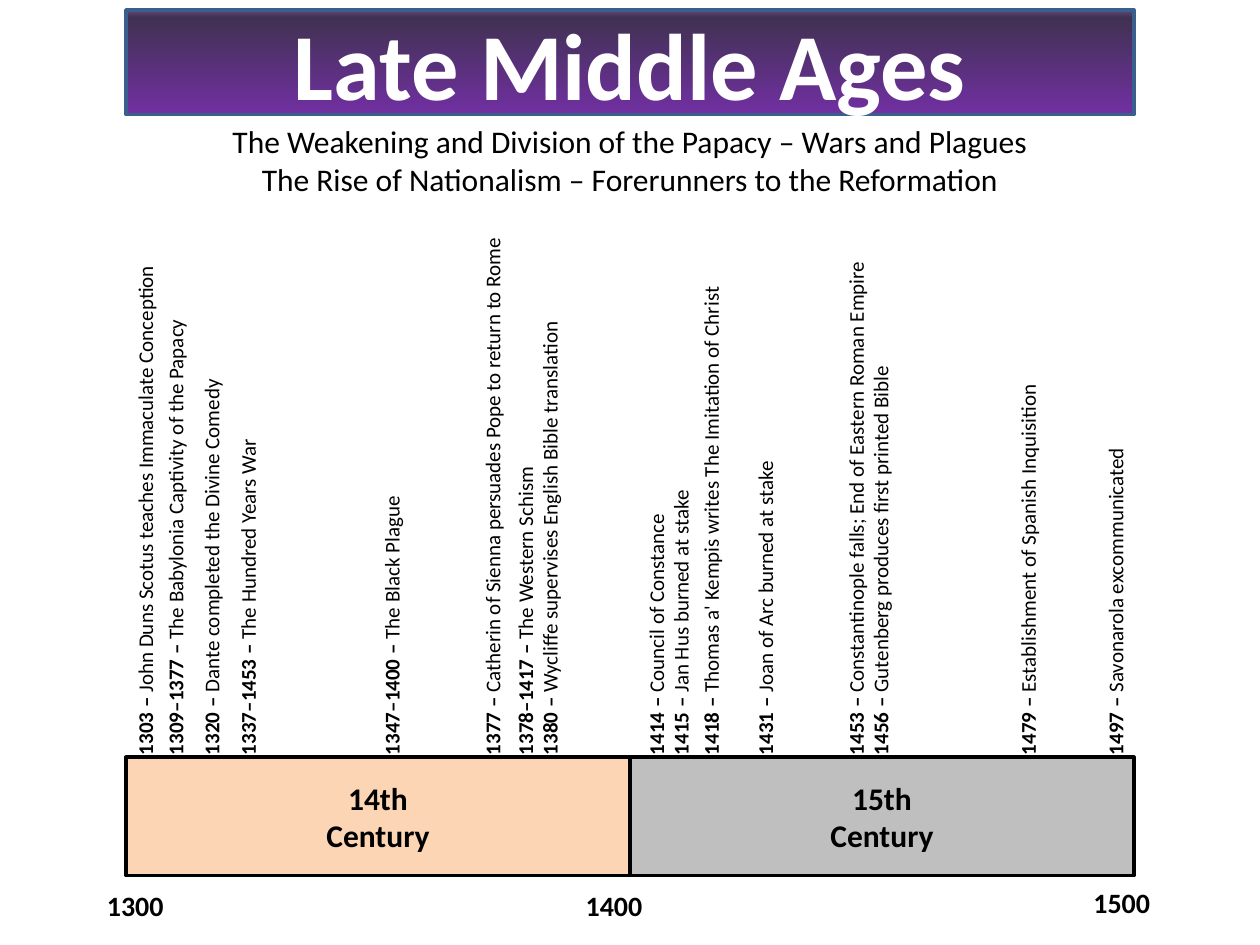
import copy
from dataclasses import dataclass

import pptx
import pptx.dml.color
import pptx.enum.shapes
import pptx.enum.text
import pptx.oxml.ns
import pptx.util

SLIDE_WIDTH = pptx.util.Inches(10)
SLIDE_HEIGHT = pptx.util.Inches(7.5)
COLUMNS, ROWS = 100, 75
FONT = "Calibri"
BLACK, WHITE = "000000", "FFFFFF"
BAR_LEFT, BAR_TOP, BAR_HEIGHT, CENTURY_COLUMNS = 10, 60.1, 9.4, 40
EVENT_FOOT, EVENT_HEIGHT = 60.9, 3
HANGING_INDENT = pptx.util.Inches(0.43)
ALIGN = pptx.enum.text.PP_ALIGN


@dataclass
class Area:
    column: float
    row: float
    columns: float
    rows: float

    def place(self) -> tuple[int, int, int, int]:
        return (
            round(SLIDE_WIDTH * self.column / COLUMNS),
            round(SLIDE_HEIGHT * self.row / ROWS),
            round(SLIDE_WIDTH * self.columns / COLUMNS),
            round(SLIDE_HEIGHT * self.rows / ROWS),
        )


@dataclass
class Century:
    name: str
    fill: str


@dataclass
class YearMark:
    year: str
    column: float
    row: float


@dataclass
class Event:
    years: str
    description: str
    column: float
    length: float


CENTURIES = [Century("14th", "FCD5B5"), Century("15th", "BFBFBF")]

YEAR_MARKS = [
    YearMark("1300", 7.5, 70),
    YearMark("1400", 45.5, 70),
    YearMark("1500", 85.8, 69.8),
]

EVENTS = [
    Event("1303", "John Duns Scotus teaches Immaculate Conception", 11.5, 41.6),
    Event("1309–1377", "The Babylonia Captivity of the Papacy", 13.9, 38.4),
    Event("1320", "Dante completed the Divine Comedy", 16.75, 32.5),
    Event("1337–1453", "The Hundred Years War", 19.65, 30.9),
    Event("1347–1400", "The Black Plague", 31.05, 25.1),
    Event("1377", "Catherin of Sienna persuades Pope to return to Rome", 39.05, 44.1),
    Event("1378–1417", "The Western Schism", 41.65, 28.3),
    Event("1380", "Wycliffe supervises English Bible translation", 43.6, 38.4),
    Event("1414", "Council of Constance", 52.05, 21.9),
    Event("1415", "Jan Hus burned at stake", 54, 25.8),
    Event("1418", "Thomas a' Kempis writes The Imitation of Christ", 56.4, 41.2),
    Event("1431", "Joan of Arc burned at stake", 60.7, 38.4),
    Event("1453", "Constantinople falls; End of Eastern Roman Empire", 67.9, 43),
    Event("1456", "Gutenberg produces first printed Bible", 69.85, 33.9),
    Event("1479", "Establishment of Spanish Inquisition", 81.55, 32.1),
    Event("1497", "Savonarola excommunicated", 88.5, 27.2),
]


def color(value: str) -> pptx.dml.color.RGBColor:
    return pptx.dml.color.RGBColor.from_string(value)


def add_run(paragraph, text: str, *, size: float, bold: bool = False, fill: str = BLACK) -> None:
    run = paragraph.add_run()
    run.text = text
    run.font.name = FONT
    run.font.size = pptx.util.Pt(size)
    run.font.bold = bold
    run.font.color.rgb = color(fill)


def write_lines(shape, lines: list[str], *, align=ALIGN.CENTER, **text_format) -> None:
    frame = shape.text_frame
    for index, line in enumerate(lines):
        paragraph = frame.add_paragraph() if index else frame.paragraphs[0]
        paragraph.alignment = align
        add_run(paragraph, line, **text_format)


def add_box(slide, area: Area, outline: str):
    shape = slide.shapes.add_shape(pptx.enum.shapes.MSO_SHAPE.RECTANGLE, *area.place())
    shape.shadow.inherit = False
    shape.line.color.rgb = color(outline)
    shape.line.width = pptx.util.Pt(2)
    shape.text_frame.vertical_anchor = pptx.enum.text.MSO_ANCHOR.MIDDLE
    return shape


def add_text_area(slide, area: Area):
    shape = slide.shapes.add_textbox(*area.place())
    shape.text_frame.word_wrap = True
    shape.text_frame.auto_size = pptx.enum.text.MSO_AUTO_SIZE.SHAPE_TO_FIT_TEXT
    return shape


def fill_gradient(shape, stops: list[tuple[float, str]]) -> None:
    shape.fill.gradient()
    shape.fill.gradient_angle = 270
    stop_list = shape.element.spPr.find(".//" + pptx.oxml.ns.qn("a:gsLst"))
    while len(stop_list) < len(stops):
        stop_list.append(copy.deepcopy(stop_list[0]))
    for stop, (position, value) in zip(shape.fill.gradient_stops, stops):
        stop.position = position
        stop.color.rgb = color(value)


def add_title(slide) -> None:
    banner = add_box(slide, Area(10, 0.8, 80, 8.3), "3A5F8C")
    fill_gradient(banner, [(0, "604A7B"), (0.07, "403152"), (0.98, "7030A0")])
    write_lines(banner, ["Late Middle Ages"], size=54, bold=True, fill=WHITE)
    themes = [
        "The Weakening and Division of the Papacy – Wars and Plagues",
        "The Rise of Nationalism – Forerunners to the Reformation",
    ]
    write_lines(add_text_area(slide, Area(10, 9.2, 80, 7.1)), themes, size=18)


def add_century(slide, index: int, century: Century) -> None:
    left = BAR_LEFT + index * CENTURY_COLUMNS
    shape = add_box(slide, Area(left, BAR_TOP, CENTURY_COLUMNS, BAR_HEIGHT), BLACK)
    shape.fill.solid()
    shape.fill.fore_color.rgb = color(century.fill)
    write_lines(shape, [century.name, "Century"], size=18, bold=True)


def add_year_mark(slide, mark: YearMark) -> None:
    shape = add_text_area(slide, Area(mark.column, mark.row, 7.1, 3.7))
    write_lines(shape, [mark.year], align=ALIGN.LEFT, size=16, bold=True)


def add_event(slide, event: Event) -> None:
    left = event.column - event.length / 2
    top = EVENT_FOOT - event.length / 2 - EVENT_HEIGHT / 2
    shape = add_text_area(slide, Area(left, top, event.length, EVENT_HEIGHT))
    shape.rotation = 270
    paragraph = shape.text_frame.paragraphs[0]
    properties = paragraph._p.get_or_add_pPr()
    properties.set("marL", str(HANGING_INDENT))
    properties.set("indent", str(-HANGING_INDENT))
    add_run(paragraph, f"{event.years} – ", size=12, bold=True)
    add_run(paragraph, event.description, size=12)


def main() -> None:
    presentation = pptx.Presentation()
    presentation.slide_width = SLIDE_WIDTH
    presentation.slide_height = SLIDE_HEIGHT
    slide = presentation.slides.add_slide(presentation.slide_layouts[6])
    add_title(slide)
    for index, century in enumerate(CENTURIES):
        add_century(slide, index, century)
    for mark in YEAR_MARKS:
        add_year_mark(slide, mark)
    for event in EVENTS:
        add_event(slide, event)
    presentation.save("out.pptx")


if __name__ == "__main__":
    main()
